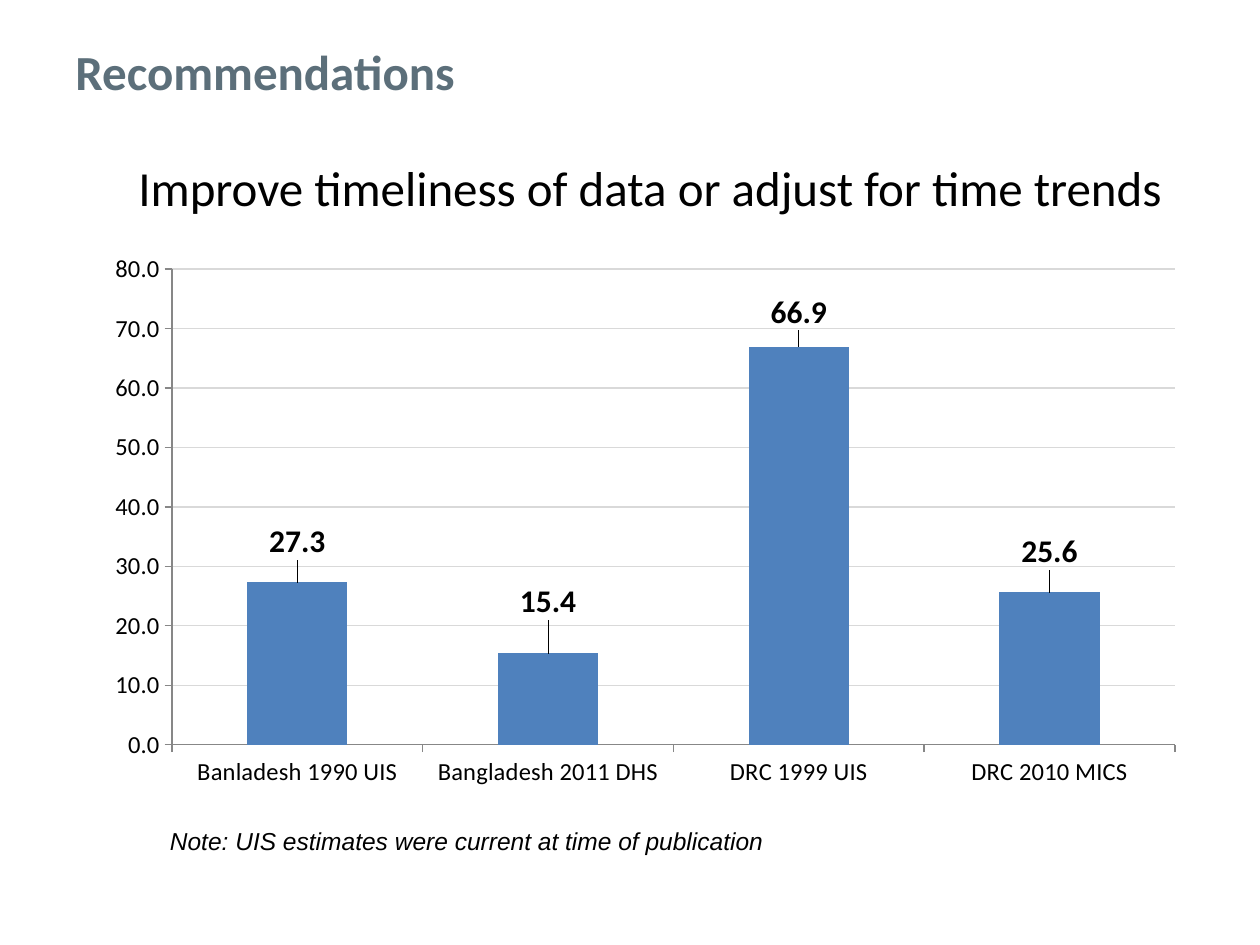
from lxml import etree
from pptx import Presentation, util as u
from pptx.chart.data import CategoryChartData
from pptx.dml.color import RGBColor
from pptx.enum import chart as c, text as t
from pptx.oxml import ns

WIDTH, HEIGHT = u.Inches(10), u.Inches(7.5)
BLACK = RGBColor(0, 0, 0)
SLATE = RGBColor(0x5C, 0x6F, 0x7A)
BLUE = RGBColor(0x4F, 0x81, 0xBD)
GRID_GREY = RGBColor(0xD9, 0xD9, 0xD9)
AXIS_GREY = RGBColor(0x87, 0x87, 0x87)
RATES = {
    "Banladesh 1990 UIS": 27.3,
    "Bangladesh 2011 DHS": 15.4,
    "DRC 1999 UIS": 66.9,
    "DRC 2010 MICS": 25.6,
}
LABEL_LIFTS = (-0.03, -0.05, -0.02, -0.03)


def share(left, top, width, height):
    """Turn shares of the slide's size into a box."""
    return (int(left * WIDTH), int(top * HEIGHT),
            int(width * WIDTH), int(height * HEIGHT))


def set_font(font, color=BLACK, **values):
    """Apply a dict of format values and a colour to a font."""
    for name, value in values.items():
        setattr(font, name, value)
    font.color.rgb = color


def add_line_of_text(slide, box, wording, frame_values, indent=0, **font_values):
    """Place one paragraph of text in the given box."""
    frame = slide.shapes.add_textbox(*box).text_frame
    for name, value in frame_values.items():
        setattr(frame, name, value)
    paragraph = frame.paragraphs[0]
    paragraph.text = wording
    if indent:
        paragraph._p.get_or_add_pPr().set("marL", str(indent))
    set_font(paragraph.runs[0].font, **font_values)


def lift_label(label, lift):
    """Shift a data label by a share of the chart's height."""
    label.position = c.XL_LABEL_POSITION.OUTSIDE_END
    set_font(label.font, size=u.Pt(18), bold=True, name="Calibri")
    layout = etree.Element(ns.qn("c:layout"))
    manual = etree.SubElement(layout, ns.qn("c:manualLayout"))
    for axis, offset in (("x", 0), ("y", lift)):
        etree.SubElement(manual, ns.qn(f"c:{axis}"), val=str(offset))
    label._dLbl.find(ns.qn("c:idx")).addnext(layout)


def add_rate_chart(slide, box):
    """Draw the rates of each survey as columns in the given box."""
    data = CategoryChartData(number_format="0.0")
    data.categories = list(RATES)
    data.add_series("Series 1", list(RATES.values()))
    chart = slide.shapes.add_chart(
        c.XL_CHART_TYPE.COLUMN_CLUSTERED, *box, data).chart
    chart.has_legend = chart.has_title = False
    set_font(chart.font, size=u.Pt(10), name="Calibri")

    for axis in (chart.category_axis, chart.value_axis):
        axis.major_tick_mark = c.XL_TICK_MARK.OUTSIDE
        axis.format.line.color.rgb = AXIS_GREY
        axis.format.line.width = u.Pt(0.75)
        set_font(axis.tick_labels.font, size=u.Pt(14), name="Calibri")
    rate_axis = chart.value_axis
    rate_axis.minimum_scale, rate_axis.maximum_scale = 0, 80
    rate_axis.major_unit = 10
    rate_axis.tick_labels.number_format = "0.0"
    rate_axis.tick_labels.number_format_is_linked = False
    rate_axis.major_gridlines.format.line.color.rgb = GRID_GREY
    rate_axis.major_gridlines.format.line.width = u.Pt(0.75)

    plot = chart.plots[0]
    plot.gap_width = 150
    plot.vary_by_categories = False
    plot.has_data_labels = True
    labels = plot.data_labels
    label_values = dict(show_value=True, number_format="0.0",
                        number_format_is_linked=False,
                        position=c.XL_LABEL_POSITION.OUTSIDE_END)
    for name, value in label_values.items():
        setattr(labels, name, value)
    set_font(labels.font, size=u.Pt(18), bold=True, name="Calibri")
    rates = plot.series[0]
    rates.format.fill.solid()
    rates.format.fill.fore_color.rgb = BLUE
    for index, lift in enumerate(LABEL_LIFTS):
        lift_label(rates.points[index].data_label, lift)


def build_recommendation(slide):
    """Fill the slide with its title, advice, chart and note."""
    add_line_of_text(
        slide, share(0.05, 0, 0.62, 0.15), "Recommendations",
        dict(word_wrap=True, vertical_anchor=t.MSO_ANCHOR.MIDDLE),
        color=SLATE, size=u.Pt(28), bold=True, name="Calibri")
    add_line_of_text(
        slide, share(0.05, 0.16, 0.9, 0.73),
        "Improve timeliness of data or adjust for time trends",
        dict(word_wrap=True), indent=u.Inches(0.5),
        size=u.Pt(28), name="Calibri")
    add_line_of_text(
        slide, share(0.125, 0.867, 0.494, 0.045),
        "Note: UIS estimates were current at time of publication",
        dict(word_wrap=False, auto_size=t.MSO_AUTO_SIZE.SHAPE_TO_FIT_TEXT),
        size=u.Pt(14), italic=True, name="Arial")
    add_rate_chart(slide, share(0.074, 0.257, 0.876, 0.588))


def main():
    """Build the deck and save it."""
    deck = Presentation()
    deck.slide_width, deck.slide_height = WIDTH, HEIGHT
    build_recommendation(deck.slides.add_slide(deck.slide_layouts[6]))
    deck.save("out.pptx")


if __name__ == "__main__":
    main()
